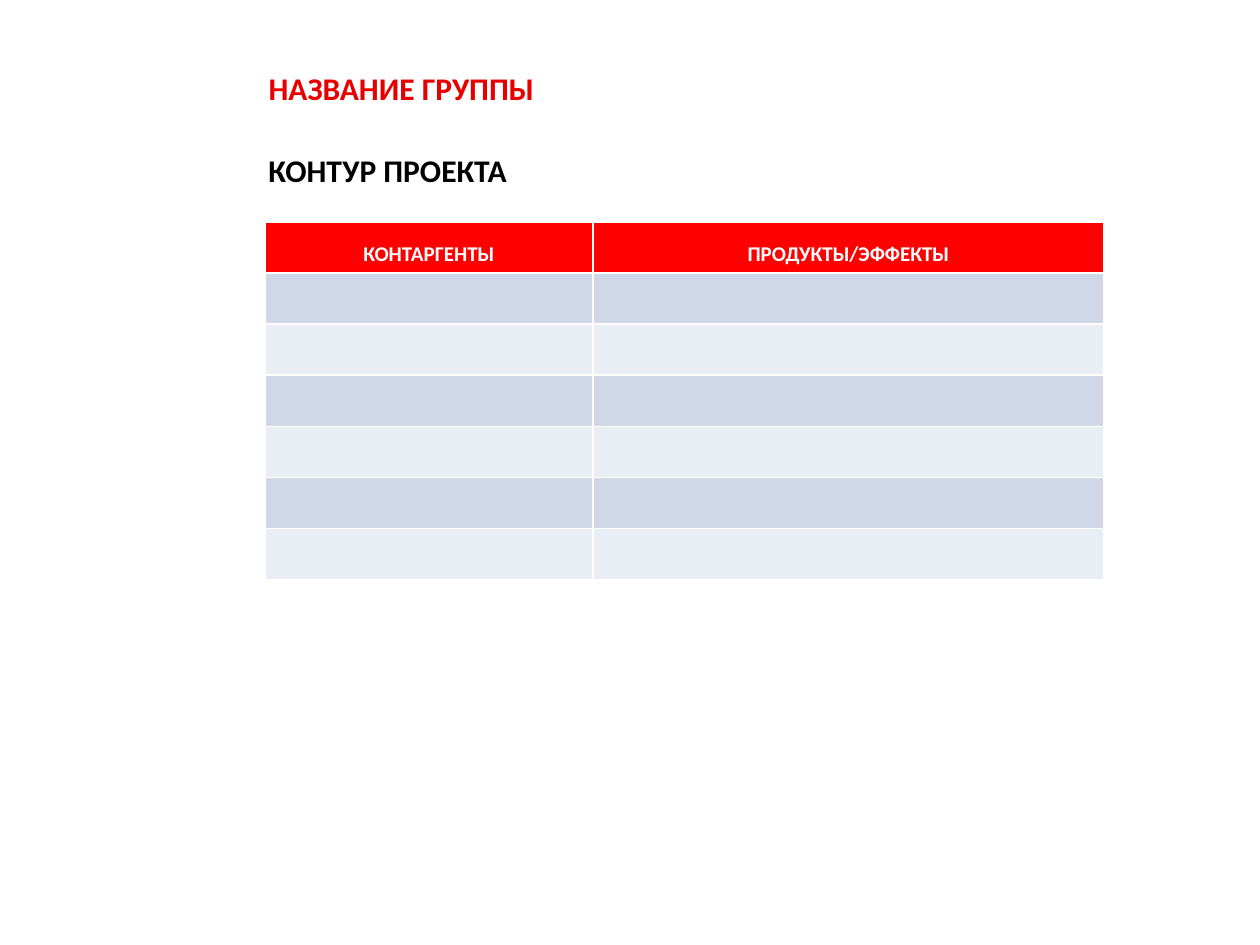
from dataclasses import dataclass

from pptx import Presentation
from pptx.dml.color import RGBColor
from pptx.enum.text import MSO_ANCHOR, MSO_AUTO_SIZE, PP_ALIGN
from pptx.shapes.autoshape import Shape
from pptx.slide import Slide
from pptx.text.text import _Paragraph
from pptx.util import Emu, Pt

LEFT, CENTER = PP_ALIGN.LEFT, PP_ALIGN.CENTER
TOP, MIDDLE = MSO_ANCHOR.TOP, MSO_ANCHOR.MIDDLE
NO_FIT = MSO_AUTO_SIZE.NONE

FONT = "Calibri"
CRIMSON = RGBColor(0xE6, 0x00, 0x00)
RED = RGBColor(0xFF, 0x00, 0x00)
BLACK = RGBColor(0x00, 0x00, 0x00)
WHITE = RGBColor(0xFF, 0xFF, 0xFF)
BANDS = (RGBColor(0xD0, 0xD8, 0xE8), RGBColor(0xE9, 0xED, 0xF4))

ROWS = 7
ROW_HIGH = 50


@dataclass(frozen=True)
class Box:
    left: int
    top: int
    width: int
    height: int

    def emu(self) -> tuple[Emu, Emu, Emu, Emu]:
        return px(self.left), px(self.top), px(self.width), px(self.height)


@dataclass(frozen=True)
class Label:
    text: str
    box: Box
    color: RGBColor
    anchor: MSO_ANCHOR


@dataclass(frozen=True)
class Column:
    head: str
    width: int


TITLE = Label("НАЗВАНИЕ ГРУППЫ", Box(256, 63, 901, 49), CRIMSON, MIDDLE)
SUBHEAD = Label("КОНТУР ПРОЕКТА", Box(256, 145, 630, 50), BLACK, TOP)
COLUMNS = (Column("КОНТАРГЕНТЫ", 328), Column("ПРОДУКТЫ/ЭФФЕКТЫ", 511))


def px(count: int) -> Emu:
    return Emu(round(count * 914400 / 126))


def style(para: _Paragraph, size: int, color: RGBColor, align: PP_ALIGN) -> None:
    para.alignment = align
    for run in para.runs:
        run.font.name = FONT
        run.font.size = Pt(size)
        run.font.bold = True
        run.font.color.rgb = color


def write(shape: Shape, label: Label) -> None:
    shape.left, shape.top, shape.width, shape.height = label.box.emu()
    frame = shape.text_frame
    frame.text = label.text
    frame.word_wrap = True
    frame.auto_size = NO_FIT
    frame.vertical_anchor = label.anchor
    style(frame.paragraphs[0], 18, label.color, LEFT)


def draw_table(slide: Slide) -> None:
    width = sum(column.width for column in COLUMNS)
    box = Box(265, 222, width, ROWS * ROW_HIGH)
    table = slide.shapes.add_table(ROWS, len(COLUMNS), *box.emu()).table
    for index, column in enumerate(COLUMNS):
        table.columns[index].width = px(column.width)
        head = table.cell(0, index)
        head.text_frame.text = column.head
        para = head.text_frame.paragraphs[0]
        para.line_spacing = 1.5
        style(para, 12, WHITE, CENTER)
        for row in range(ROWS):
            fill = table.cell(row, index).fill
            fill.solid()
            fill.fore_color.rgb = BANDS[(row - 1) % 2] if row else RED


def main() -> None:
    """Build the project outline slide."""
    deck = Presentation()
    deck.slide_width, deck.slide_height = px(1260), px(945)
    slide = deck.slides.add_slide(deck.slide_layouts[5])
    write(slide.shapes.title, TITLE)
    write(slide.shapes.add_textbox(*SUBHEAD.box.emu()), SUBHEAD)
    draw_table(slide)
    deck.save("out.pptx")


if __name__ == "__main__":
    main()
